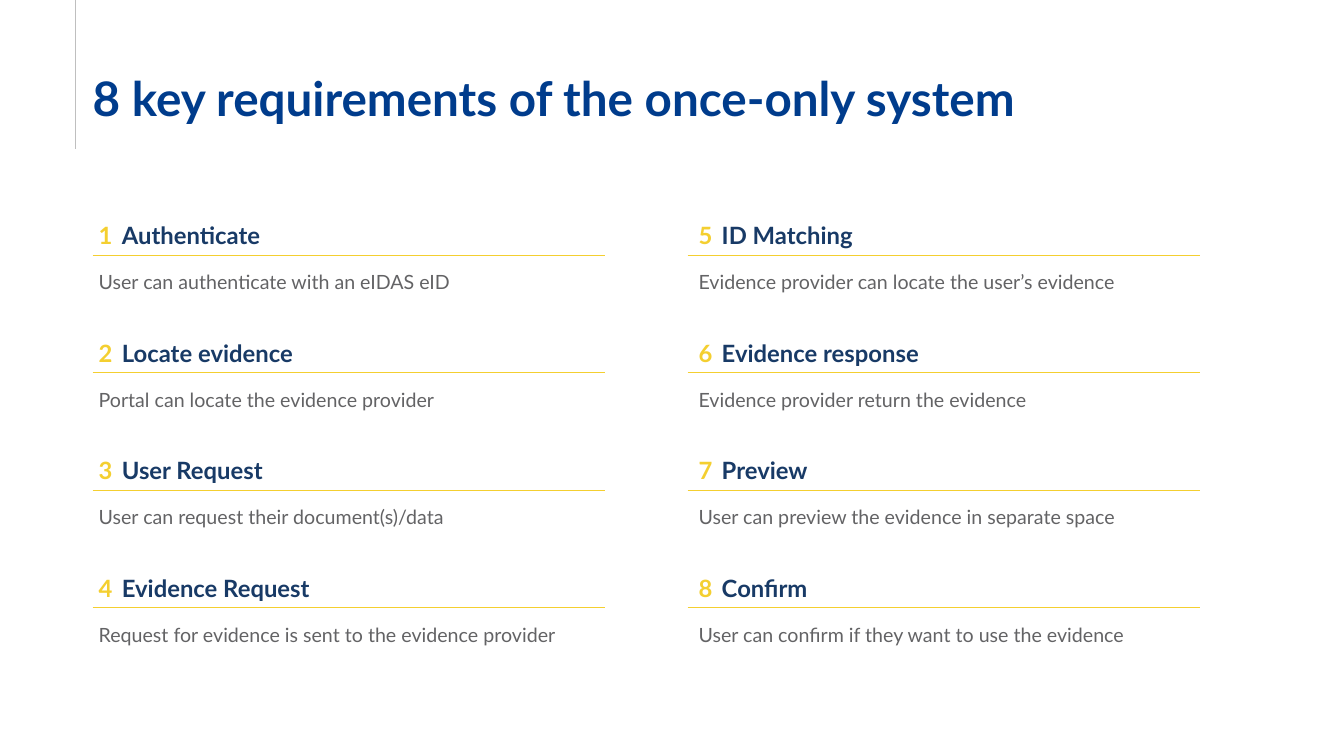
"""Builds a slide listing eight requirements in two columns."""
from lxml import etree
from pptx import Presentation
from pptx import util as u
from pptx.dml.color import RGBColor
from pptx.enum import shapes, text
from pptx.oxml.ns import qn

TITLE = "8 key requirements of the once-only system"
ITEMS = [
    ("Authenticate", "User can authenticate with an eIDAS eID"),
    ("Locate evidence", "Portal can locate the evidence provider"),
    ("User Request", "User can request their document(s)/data"),
    ("Evidence Request", "Request for evidence is sent to the evidence provider"),
    ("ID Matching", "Evidence provider can locate the user’s evidence"),
    ("Evidence response", "Evidence provider return the evidence"),
    ("Preview", "User can preview the evidence in separate space"),
    ("Confirm", "User can confirm if they want to use the evidence"),
]
FONT = "Lato"
BLUE, NAVY, GOLD, GRAY, PALE = "003C8C", "183A66", "F4CF30", "636365", "BFBFBF"
COLS = [(0.88, 0.92), (6.83, 6.82)]
ROWS, TOP, PITCH = 4, 2.14, 3.5 / 3
RULE, NOTE, WIDTH = 0.39, 0.49, 5.08
TAB = 0.23


def color(code):
    return RGBColor.from_string(code)


def add_line(slide, left, top, right, low, code):
    line = slide.shapes.add_connector(
        shapes.MSO_CONNECTOR.STRAIGHT, *map(u.Inches, (left, top, right, low)))
    line.line.color.rgb = color(code)
    line.line.width = u.Pt(0.5)
    etree.SubElement(line._element.spPr, qn("a:effectLst"))


def add_text(slide, box, runs, size, bold=False):
    frame = slide.shapes.add_textbox(*map(u.Inches, box)).text_frame
    frame.word_wrap = True
    para = frame.paragraphs[0]
    para.font.name, para.font.size, para.font.bold = FONT, u.Pt(size), bold
    for words, code in runs:
        run = para.add_run()
        run.text = words
        run.font.color.rgb = color(code)
    return frame


def add_tab(para, pos):
    props = para._p.get_or_add_pPr()
    tabs = etree.Element(qn("a:tabLst"))
    etree.SubElement(tabs, qn("a:tab"), pos=str(u.Inches(pos)), algn="l")
    props.insert(0, tabs)


def add_item(slide, num, head, note):
    col, row = divmod(num - 1, ROWS)
    left, start = COLS[col]
    top = TOP + row * PITCH
    frame = add_text(slide, (left, top, 5.51, 0.39),
                     [(f"{num}\t", GOLD), (head, NAVY)], 17, True)
    add_tab(frame.paragraphs[0], TAB)
    add_line(slide, start, top + RULE, start + WIDTH, top + RULE, GOLD)
    add_text(slide, (left, top + NOTE, WIDTH, 0.34), [(note, GRAY)], 14)


def main():
    deck = Presentation()
    deck.slide_width, deck.slide_height = u.Inches(13.33), u.Inches(7.5)
    slide = deck.slides.add_slide(deck.slide_layouts[6])
    add_line(slide, 0.75, 0, 0.75, 1.48, PALE)
    frame = add_text(slide, (0.92, 0.75, 11.5, 0.39), [(TITLE, BLUE)], 34, True)
    frame.margin_left = frame.margin_right = 0
    frame.margin_top = frame.margin_bottom = 0
    frame.vertical_anchor = text.MSO_ANCHOR.TOP
    frame.paragraphs[0].line_spacing = 0.9
    for num, (head, note) in enumerate(ITEMS, 1):
        add_item(slide, num, head, note)
    deck.save("out.pptx")


if __name__ == "__main__":
    main()
